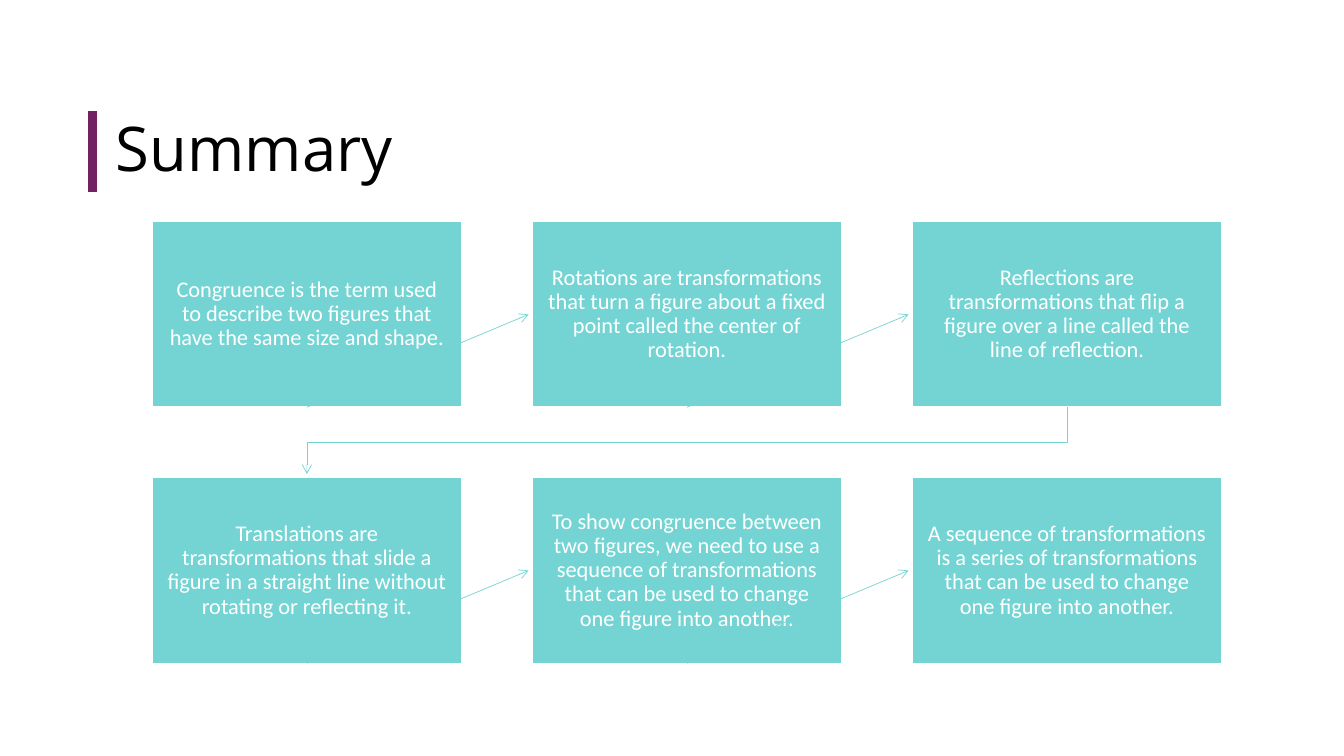
from dataclasses import dataclass

from lxml.etree import SubElement
from pptx import Presentation
from pptx.dml.color import RGBColor
from pptx.enum.shapes import MSO_CONNECTOR as Connector, MSO_SHAPE as Shape
from pptx.enum.text import MSO_ANCHOR as Anchor, MSO_AUTO_SIZE as AutoSize, PP_ALIGN as Align
from pptx.oxml.ns import qn
from pptx.util import Pt


@dataclass(frozen=True)
class Theme:
    accent: RGBColor = RGBColor.from_string("722262")
    teal: RGBColor = RGBColor.from_string("74D4D3")
    white: RGBColor = RGBColor.from_string("FFFFFF")
    black: RGBColor = RGBColor.from_string("000000")
    title_font: str = "Open Sans"
    body_font: str = "Calibri"
    title_size: int = 44
    body_size: int = 16


THEME = Theme()
TOP, LEFT, RIGHT, BOTTOM = 0, 1, 2, 3
COLUMNS = 3
GRID_LEFT, GRID_TOP = 108.72, 158.4
BOX_WIDTH, BOX_HEIGHT = 221.04, 132.48
COLUMN_STEP, ROW_STEP = 271.44, 182.88
ARROW_GAP = 2.6
STEPS = [
    "Congruence is the term used to describe two figures that have the same size and shape.",
    "Rotations are transformations that turn a figure about a fixed point called the center of rotation.",
    "Reflections are transformations that flip a figure over a line called the line of reflection.",
    "Translations are transformations that slide a figure in a straight line without rotating or reflecting it.",
    "To show congruence between two figures, we need to use a sequence of transformations "
    "that can be used to change one figure into another.",
    "A sequence of transformations is a series of transformations that can be used to change "
    "one figure into another.",
]


def write_text(shape, text, *, font, size, color, align, margins):
    frame = shape.text_frame
    frame.word_wrap = True
    frame.auto_size = AutoSize.NONE
    frame.vertical_anchor = Anchor.MIDDLE
    frame.margin_left = frame.margin_right = Pt(margins[0])
    frame.margin_top = frame.margin_bottom = Pt(margins[1])
    para = frame.paragraphs[0]
    para.alignment = align
    para.line_spacing = 0.9
    span = para.add_run()
    span.text = text
    span.font.name = font
    span.font.size = Pt(size)
    span.font.color.rgb = color


def style_line(shape, color, width, arrow=False):
    shape.line.color.rgb = color
    shape.line.width = Pt(width)
    if arrow:
        SubElement(shape.line._get_or_add_ln(), qn("a:tailEnd"), type="arrow")


def add_line(page, start, end, color, width, arrow=False):
    line = page.shapes.add_connector(Connector.STRAIGHT, *map(Pt, (*start, *end)))
    style_line(line, color, width, arrow)
    SubElement(line._element.spPr, qn("a:effectLst"))
    return line


def add_title(page, text):
    title = page.shapes.title
    title.left, title.top, title.width, title.height = map(Pt, (75.6, 79.2, 828, 57.6))
    write_text(title, text, font=THEME.title_font, size=THEME.title_size,
               color=THEME.black, align=Align.LEFT, margins=(7.2, 3.6))
    add_line(page, (66.24, 79.2), (66.24, 136.8), THEME.accent, 6)


def add_step(page, index, text):
    row, column = divmod(index, COLUMNS)
    left, top = GRID_LEFT + column * COLUMN_STEP, GRID_TOP + row * ROW_STEP
    box = page.shapes.add_shape(Shape.RECTANGLE, *map(Pt, (left, top, BOX_WIDTH, BOX_HEIGHT)))
    box.shadow.inherit = False
    box.fill.solid()
    box.fill.fore_color.rgb = THEME.teal
    style_line(box, THEME.white, 1)
    write_text(box, text, font=THEME.body_font, size=THEME.body_size,
               color=THEME.white, align=Align.CENTER, margins=(10.8, 11.52))
    return box


def add_step_arrow(page, source, target):
    middle = source.top.pt + source.height.pt / 2
    start = (source.left.pt + source.width.pt, middle)
    arrow = add_line(page, start, (target.left.pt - ARROW_GAP, middle), THEME.teal, 0.5, arrow=True)
    arrow.begin_connect(source, RIGHT)


def add_row_arrow(page, source, target):
    start_x = source.left.pt + source.width.pt / 2
    end_x = target.left.pt + target.width.pt / 2
    start_y = source.top.pt + source.height.pt
    bend_y = (start_y + target.top.pt) / 2
    builder = page.shapes.build_freeform(Pt(start_x), Pt(start_y))
    corners = [(start_x, bend_y), (end_x, bend_y), (end_x, target.top.pt - ARROW_GAP)]
    builder.add_line_segments([(Pt(x), Pt(y)) for x, y in corners], close=False)
    arrow = builder.convert_to_shape()
    arrow.shadow.inherit = False
    arrow.fill.background()
    style_line(arrow, THEME.teal, 0.5, arrow=True)


def main():
    deck = Presentation()
    deck.slide_width, deck.slide_height = Pt(960), Pt(540)
    page = deck.slides.add_slide(deck.slide_layouts[5])
    add_title(page, "Summary")
    boxes = [add_step(page, index, text) for index, text in enumerate(STEPS)]
    for source, target in zip(boxes, boxes[1:]):
        connect = add_step_arrow if source.top == target.top else add_row_arrow
        connect(page, source, target)
    deck.save("out.pptx")


if __name__ == "__main__":
    main()
